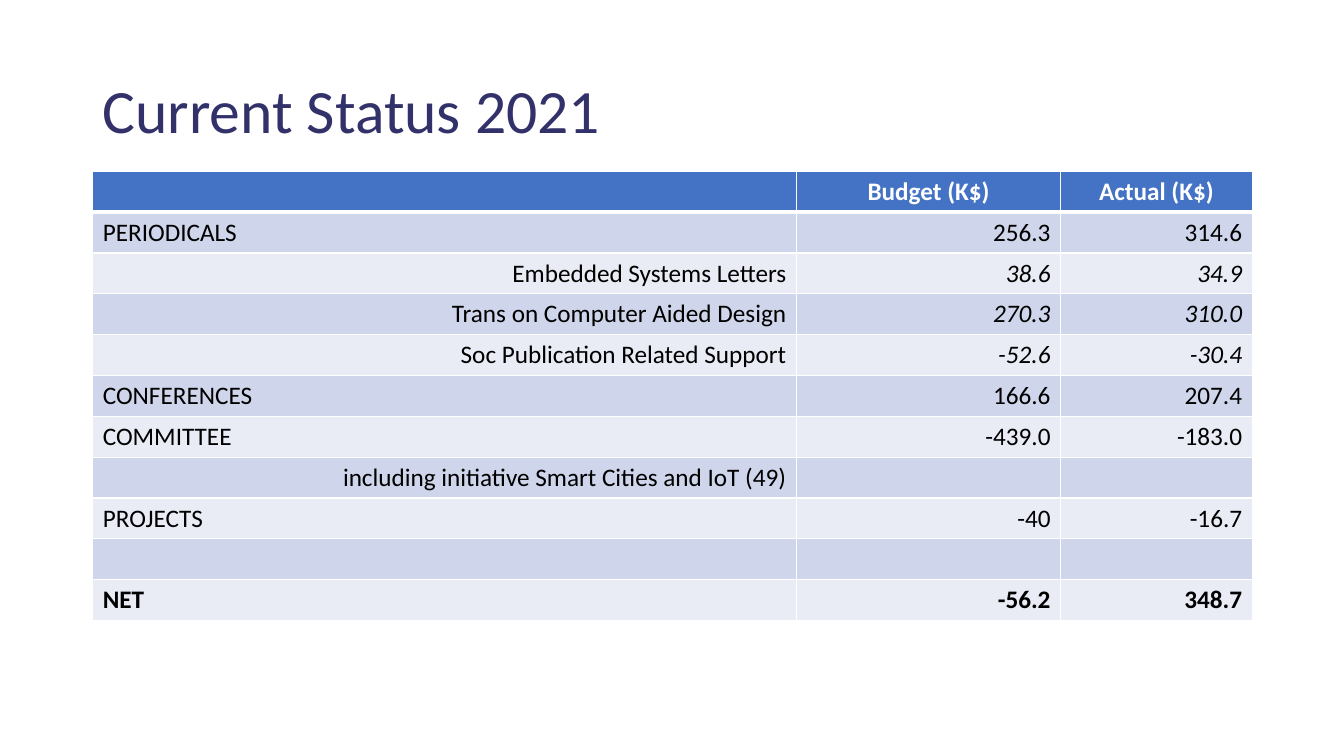
"""Build the Current Status 2021 budget slide."""
from lxml.etree import SubElement
from pptx import Presentation
from pptx.dml.color import RGBColor
from pptx.enum.text import MSO_ANCHOR, PP_ALIGN
from pptx.oxml.ns import qn
from pptx.util import Inches, Pt

TITLE = "Current Status 2021"
HEADINGS = ("", "Budget (K$)", "Actual (K$)")
LINES = [
    ("main", "PERIODICALS", "256.3", "314.6"),
    ("detail", "Embedded Systems Letters", "38.6", "34.9"),
    ("detail", "Trans on Computer Aided Design", "270.3", "310.0"),
    ("detail", "Soc Publication Related Support", "-52.6", "-30.4"),
    ("main", "CONFERENCES", "166.6", "207.4"),
    ("main", "COMMITTEE", "-439.0", "-183.0"),
    ("detail", "including initiative Smart Cities and IoT (49)", "", ""),
    ("main", "PROJECTS", "-40", "-16.7"),
    ("main", "", "", ""),
    ("total", "NET", "-56.2", "348.7"),
]
COLORS = {
    "title": "32316A",
    "heading": "4472C4",
    "odd": "CFD5EA",
    "even": "E9EBF5",
    "text": "000000",
    "white": "FFFFFF",
}
FONT = "Calibri"
COLUMN_WIDTHS = (6.98, 2.62, 1.9)
LEFT, WIDTH = Inches(0.92), Inches(11.5)
TABLE_TOP, TABLE_HEIGHT = Inches(1.7), Inches(4.46)


def rgb(name):
    return RGBColor.from_string(COLORS[name])


def add_run(paragraph, text, size, color, bold=False, italic=False):
    run = paragraph.add_run()
    run.text = text
    run.font.name = FONT
    run.font.size = Pt(size)
    run.font.bold = bold
    run.font.italic = italic
    run.font.color.rgb = rgb(color)


def add_borders(cell, top, bottom):
    properties = cell._tc.get_or_add_tcPr()
    for side, width in (("lnL", 1), ("lnR", 1), ("lnT", top), ("lnB", bottom)):
        border = SubElement(properties, qn(f"a:{side}"), w=str(Pt(width)))
        fill = SubElement(border, qn("a:solidFill"))
        SubElement(fill, qn("a:srgbClr"), val=COLORS["white"])


def fill_cell(cell, text, kind, row, column):
    heading = kind == "heading"
    add_borders(cell, 3 if row == 1 else 1, 3 if heading else 1)
    cell.fill.solid()
    cell.fill.fore_color.rgb = rgb("heading" if heading else ("even", "odd")[row % 2])
    paragraph = cell.text_frame.paragraphs[0]
    paragraph.font.size = Pt(18)
    if heading:
        paragraph.alignment = PP_ALIGN.CENTER
    elif column or kind == "detail":
        paragraph.alignment = PP_ALIGN.RIGHT
    if text:
        add_run(paragraph, text, 18, "white" if heading else "text",
                bold=kind in ("heading", "total"),
                italic=kind == "detail" and column > 0)


def add_title(slide):
    frame = slide.shapes.add_textbox(LEFT, Inches(0.4), WIDTH, Inches(1.45)).text_frame
    frame.word_wrap = True
    frame.vertical_anchor = MSO_ANCHOR.MIDDLE
    frame.paragraphs[0].line_spacing = 0.9
    add_run(frame.paragraphs[0], TITLE, 44, "title")


def add_budget(slide):
    rows = [("heading", *HEADINGS), *LINES]
    budget = slide.shapes.add_table(
        len(rows), len(HEADINGS), LEFT, TABLE_TOP, WIDTH, TABLE_HEIGHT).table
    for column, width in zip(budget.columns, COLUMN_WIDTHS):
        column.width = Inches(width)
    for row, (kind, *texts) in enumerate(rows):
        for column, text in enumerate(texts):
            fill_cell(budget.cell(row, column), text, kind, row, column)


def main():
    presentation = Presentation()
    presentation.slide_width = Inches(13.33)
    presentation.slide_height = Inches(7.5)
    slide = presentation.slides.add_slide(presentation.slide_layouts[6])
    add_title(slide)
    add_budget(slide)
    presentation.save("out.pptx")


if __name__ == "__main__":
    main()
